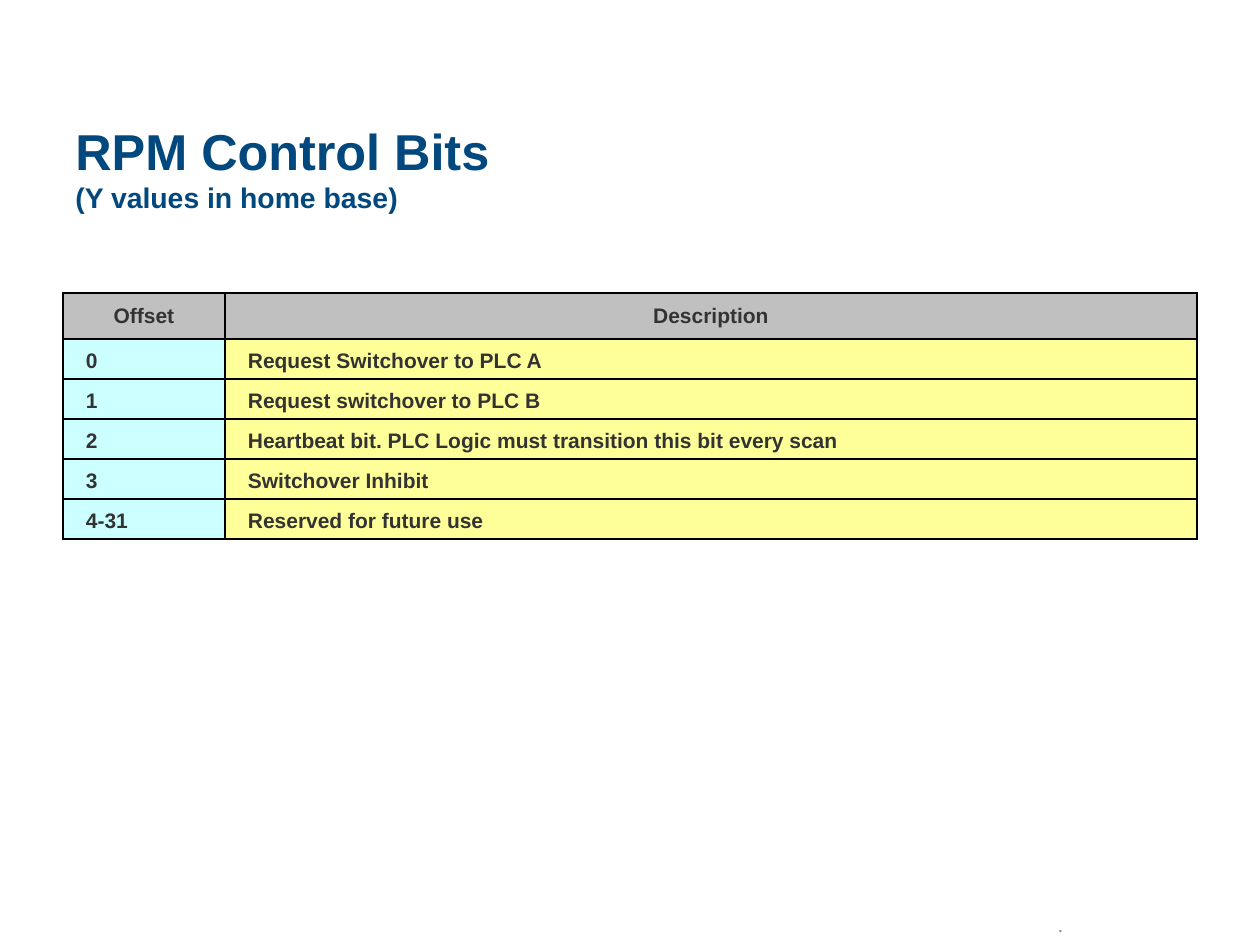
"""Build the RPM control bits slide with its offset and description table."""
import pptx
import pptx.dml.color
import pptx.enum.text
import pptx.oxml
import pptx.oxml.ns
import pptx.util

PX = 914400 / 126
ALIGN = pptx.enum.text.PP_ALIGN
ANCHOR = pptx.enum.text.MSO_ANCHOR


def px(length):
    return pptx.util.Emu(round(length * PX))


def style(font, name, size, color, bold):
    font.name, font.size, font.bold = name, pptx.util.Pt(size), bold
    font.color.rgb = pptx.dml.color.RGBColor.from_string(color)


deck = pptx.Presentation()
deck.slide_width, deck.slide_height = px(1260), px(945)
page = deck.slides.add_slide(deck.slide_layouts[6])

title = page.shapes.add_textbox(px(63), px(122), px(1134), px(90))
title.text_frame.word_wrap = True
title.text_frame.vertical_anchor = ANCHOR.MIDDLE
title.text_frame.text = "RPM Control Bits\v(Y values in home base)"
for span, size in zip(title.text_frame.paragraphs[0].runs, (28.8, 16.2)):
    style(span.font, "Arial", size, "00487D", True)

rows = [
    ("Offset", "Description"),
    ("0", "Request Switchover to PLC A"),
    ("1", "Request switchover to PLC B"),
    ("2", "Heartbeat bit. PLC Logic must transition this bit every scan"),
    ("3", "Switchover Inhibit"),
    ("4-31", "Reserved for future use"),
]
table = page.shapes.add_table(len(rows), 2, px(63), px(293), px(1134), px(246)).table
table.columns[0].width, table.columns[1].width = px(162), px(972)
for row_index, texts in enumerate(rows):
    header = row_index == 0
    table.rows[row_index].height = px(46 if header else 40)
    fills = ("C0C0C0", "C0C0C0") if header else ("CCFFFF", "FFFF99")
    for column_index, (text, fill) in enumerate(zip(texts, fills)):
        cell = table.cell(row_index, column_index)
        cell.margin_left = cell.margin_right = px(23)
        cell.margin_top = cell.margin_bottom = px(6)
        cell.vertical_anchor = ANCHOR.MIDDLE if header else ANCHOR.BOTTOM
        cell.text_frame.text = text
        para = cell.text_frame.paragraphs[0]
        para.alignment = ALIGN.CENTER if header else ALIGN.LEFT
        style(para.runs[0].font, "Arial", 12, "333333", True)
        cell.fill.solid()
        cell.fill.fore_color.rgb = pptx.dml.color.RGBColor.from_string(fill)
        properties = cell._tc.get_or_add_tcPr()
        for position, side in enumerate(("lnL", "lnR", "lnT", "lnB")):
            border = pptx.oxml.parse_xml(
                f'<a:{side} {pptx.oxml.ns.nsdecls("a")} w="12700"><a:solidFill>'
                f'<a:srgbClr val="000000"/></a:solidFill></a:{side}>'
            )
            properties.insert(position, border)

footer = page.shapes.add_textbox(px(861), px(903), px(399), px(42))
footer.text_frame.word_wrap = True
footer.text_frame.vertical_anchor = ANCHOR.MIDDLE
footer.text_frame.text = "."
footer.text_frame.paragraphs[0].alignment = ALIGN.CENTER
style(footer.text_frame.paragraphs[0].runs[0].font, "Times New Roman", 12, "909090", False)

deck.save("out.pptx")
